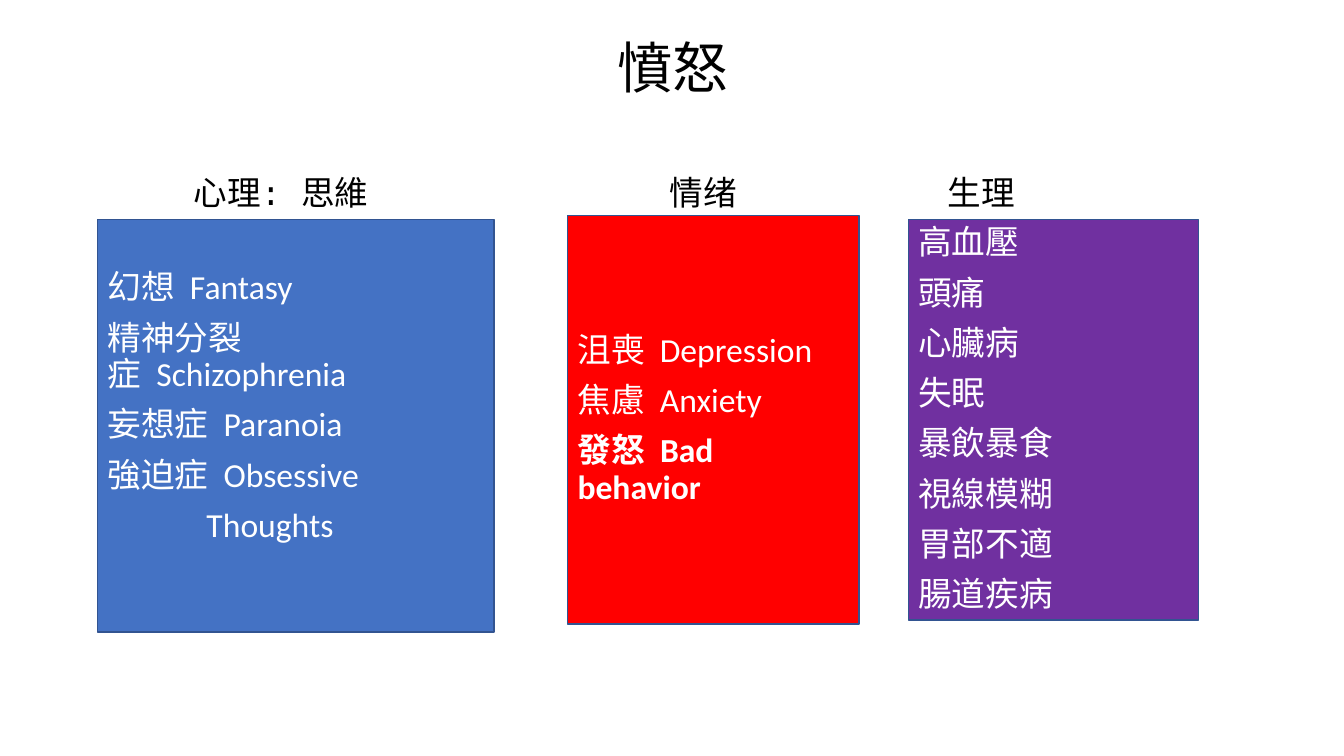
from dataclasses import dataclass

from pptx import Presentation
from pptx.dml.color import RGBColor
from pptx.enum.shapes import MSO_SHAPE
from pptx.enum.text import MSO_ANCHOR, MSO_AUTO_SIZE, PP_ALIGN
from pptx.util import Inches, Pt


@dataclass(frozen=True)
class Theme:
    """Colours, fonts and type sizes of the slide."""
    black: RGBColor = RGBColor(0, 0, 0)
    white: RGBColor = RGBColor(255, 255, 255)
    blue: RGBColor = RGBColor.from_string("4472C4")
    red: RGBColor = RGBColor.from_string("FF0000")
    purple: RGBColor = RGBColor.from_string("7030A0")
    outline: RGBColor = RGBColor.from_string("325491")
    font: str = "Calibri"
    heading_font: str = "Courier New"
    symptom_font: str = "Noto Sans CJK JP"
    title_size: float = 39.6
    body_size: float = 24


THEME = Theme()


@dataclass(frozen=True)
class Column:
    """A heading and the coloured box of lines below it."""
    heading: str
    heading_left: float
    box: tuple
    fill: RGBColor
    lines: tuple
    font: str = THEME.font
    bottom_margin: float = 0.05
    bold_line: int = -1
    indented_line: int = -1


COLUMNS = (
    Column("心理:\u00a0思維", 1.92, (0.97, 2.18, 3.93, 4.09), THEME.blue,
           ("幻想\u00a0\u00a0Fantasy", "精神分裂症\u00a0\u00a0Schizophrenia",
            "妄想症\u00a0\u00a0Paranoia", "強迫症\u00a0\u00a0Obsessive", "Thoughts"),
           bottom_margin=0.41, indented_line=4),
    Column("情绪", 6.64, (5.63, 2.14, 2.89, 4.05), THEME.red,
           ("沮喪\u00a0\u00a0Depression", "焦慮\u00a0 Anxiety", "發怒\u00a0 Bad behavior"),
           bold_line=2),
    Column("生理", 9.4, (9.01, 2.18, 2.88, 3.97), THEME.purple,
           ("高血壓", "頭痛", "心臟病", "失眠", "暴飲暴食", "視線模糊", "胃部不適", "腸道疾病"),
           font=THEME.symptom_font),
)


def prepare_frame(shape):
    """Give a shape a wrapped, middle-anchored text frame of fixed size."""
    frame = shape.text_frame
    frame.word_wrap = True
    frame.auto_size = MSO_AUTO_SIZE.NONE
    frame.vertical_anchor = MSO_ANCHOR.MIDDLE
    return frame


def format_paragraph(paragraph, color, size=THEME.body_size, font=THEME.font,
                     align=PP_ALIGN.LEFT, before=10):
    """Set the font and spacing of one paragraph."""
    paragraph.alignment = align
    paragraph.line_spacing = 0.9
    paragraph.space_before = Pt(before)
    paragraph.font.name = font
    paragraph.font.size = Pt(size)
    paragraph.font.color.rgb = color


def add_title(slide, text, box):
    """Fill the title placeholder and centre it in the box."""
    title = slide.shapes.title
    title.left, title.top, title.width, title.height = map(Inches, box)
    paragraph = prepare_frame(title).paragraphs[0]
    paragraph.text = text
    format_paragraph(paragraph, THEME.black, THEME.title_size, align=PP_ALIGN.CENTER, before=0)


def add_heading(slide, text, box):
    """Write a column heading from the left edge of the box."""
    frame = prepare_frame(slide.shapes.add_textbox(*map(Inches, box)))
    frame.margin_left = 0
    paragraph = frame.paragraphs[0]
    paragraph.text = text
    format_paragraph(paragraph, THEME.black, font=THEME.heading_font, before=0)


def add_column_box(slide, column):
    """Draw the coloured box of a column with its lines of text."""
    shape = slide.shapes.add_shape(MSO_SHAPE.FLOWCHART_PROCESS, *map(Inches, column.box))
    shape.shadow.inherit = False
    shape.fill.solid()
    shape.fill.fore_color.rgb = column.fill
    shape.line.color.rgb = THEME.outline
    shape.line.width = Pt(1)
    frame = prepare_frame(shape)
    frame.margin_right = Inches(0.22)
    frame.margin_bottom = Inches(column.bottom_margin)
    frame.text = "\n".join(column.lines)
    for index, paragraph in enumerate(frame.paragraphs):
        format_paragraph(paragraph, THEME.white, font=column.font)
        if index == column.bold_line:
            paragraph.font.bold = True
        if index == column.indented_line:
            paragraph._p.get_or_add_pPr().set("marL", str(Inches(0.98)))


def build_anger_slide(presentation):
    """Add the slide on anger with its title, headings and columns."""
    slide = presentation.slides.add_slide(presentation.slide_layouts[5])
    add_title(slide, "憤怒", (0.92, 0.36, 11.5, 0.68))
    for column in COLUMNS:
        add_heading(slide, column.heading, (column.heading_left, 1.7, 2.4, 0.46))
        add_column_box(slide, column)


def main():
    """Build the presentation and save it."""
    presentation = Presentation()
    presentation.slide_width = Inches(13.33)
    presentation.slide_height = Inches(7.5)
    build_anger_slide(presentation)
    presentation.save("out.pptx")


if __name__ == "__main__":
    main()
